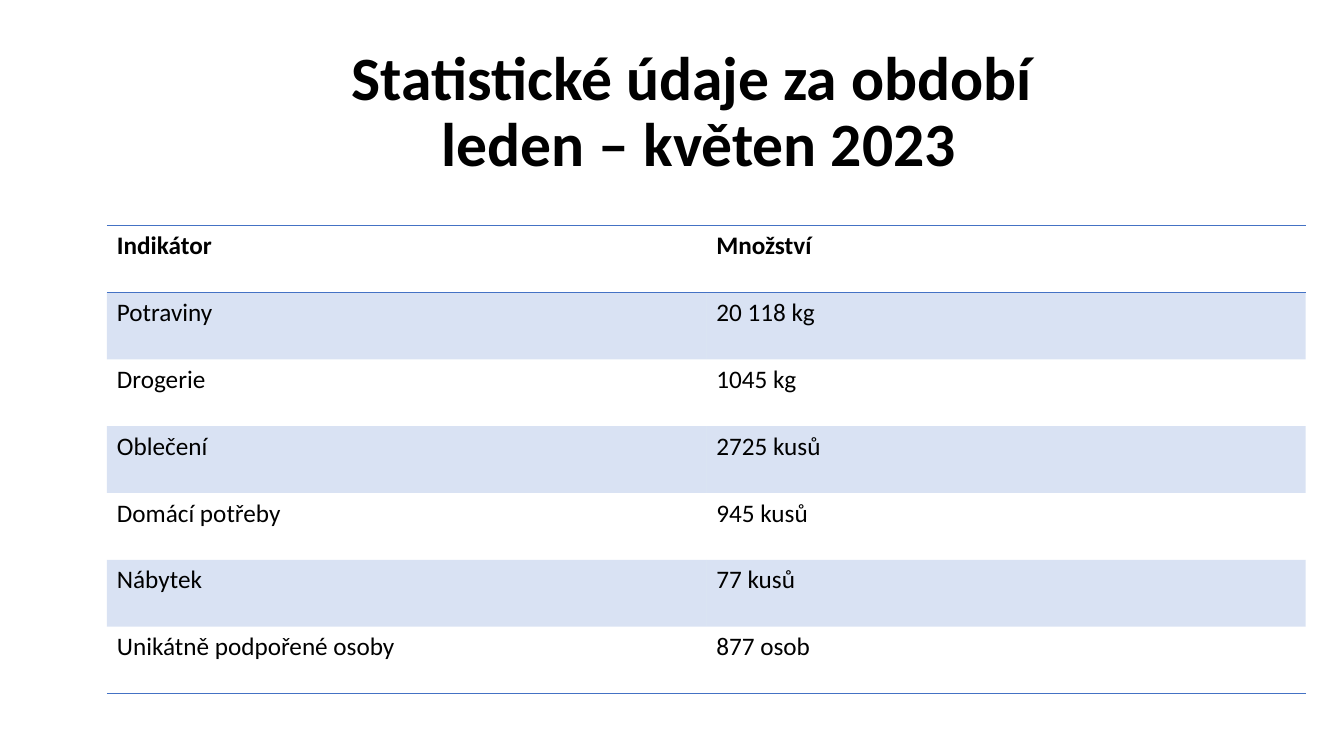
from lxml import etree
from pptx import Presentation
from pptx.dml.color import RGBColor
from pptx.enum import text
from pptx.oxml import ns
from pptx.util import Inches, Pt

ROWS = [
    ("Indikátor", "Množství"),
    ("Potraviny", "20 118 kg"),
    ("Drogerie", "1045 kg"),
    ("Oblečení", "2725 kusů"),
    ("Domácí potřeby", "945 kusů"),
    ("Nábytek", "77 kusů"),
    ("Unikátně podpořené osoby", "877 osob"),
]
PLAIN_TABLE = "{2D5ABB26-0587-4C30-8999-92F81FD0307C}"


def colour(value):
    return RGBColor.from_string(value)


def add_child(parent, tag, **attributes):
    return etree.SubElement(parent, ns.qn(tag), **attributes)


class StatisticsSlide:
    font = "Calibri"
    ink = "000000"
    accent = "4472C4"

    def __init__(self, deck):
        self.page = deck.slides.add_slide(deck.slide_layouts[5])

    def format_text(self, frame, size, bold):
        for para in frame.paragraphs:
            for span in para.runs:
                span.font.name = self.font
                span.font.size = Pt(size)
                span.font.bold = bold
                span.font.color.rgb = colour(self.ink)

    def title(self, wording, left, top, width, height):
        box = self.page.shapes.title
        box.left, box.top = Inches(left), Inches(top)
        box.width, box.height = Inches(width), Inches(height)
        frame = box.text_frame
        frame.text = wording
        frame.word_wrap = True
        frame.auto_size = text.MSO_AUTO_SIZE.NONE
        frame.vertical_anchor = text.MSO_ANCHOR.MIDDLE
        frame.paragraphs[0].alignment = text.PP_ALIGN.CENTER
        frame.paragraphs[0].line_spacing = 0.9
        self.format_text(frame, 44, True)

    def rule(self, cell, side):
        """Draw a thin accent line on one side of a cell: lnT or lnB."""
        line = add_child(cell._tc.get_or_add_tcPr(), f"a:{side}", w=str(Pt(1)))
        add_child(add_child(line, "a:solidFill"), "a:srgbClr", val=self.accent)

    def tint(self, cell):
        """Fill a cell with the accent colour at 20 % opacity."""
        cell.fill.solid()
        cell.fill.fore_color.rgb = colour(self.accent)
        shade = cell._tc.tcPr.find(f"{ns.qn('a:solidFill')}/{ns.qn('a:srgbClr')}")
        add_child(shade, "a:alpha", val="20000")

    def table(self, rows, left, top, width, height):
        grid = self.page.shapes.add_table(
            len(rows), len(rows[0]),
            Inches(left), Inches(top), Inches(width), Inches(height),
        ).table
        grid._tbl.tblPr.find(ns.qn("a:tableStyleId")).text = PLAIN_TABLE
        for index, row in enumerate(rows):
            header = index == 0
            for column, wording in enumerate(row):
                cell = grid.cell(index, column)
                cell.text_frame.text = wording
                self.format_text(cell.text_frame, 18, header)
                if header:
                    self.rule(cell, "lnT")
                if header or index == len(rows) - 1:
                    self.rule(cell, "lnB")
                if index % 2:
                    self.tint(cell)
                else:
                    cell.fill.background()


def main():
    deck = Presentation()
    deck.slide_width, deck.slide_height = Inches(13.33), Inches(7.5)
    slide = StatisticsSlide(deck)
    slide.title("Statistické údaje za období\v leden – květen 2023", 0.92, 0.4, 11.89, 1.45)
    slide.table(ROWS, 1.06, 2.24, 11.89, 4.64)
    deck.save("out.pptx")


if __name__ == "__main__":
    main()
